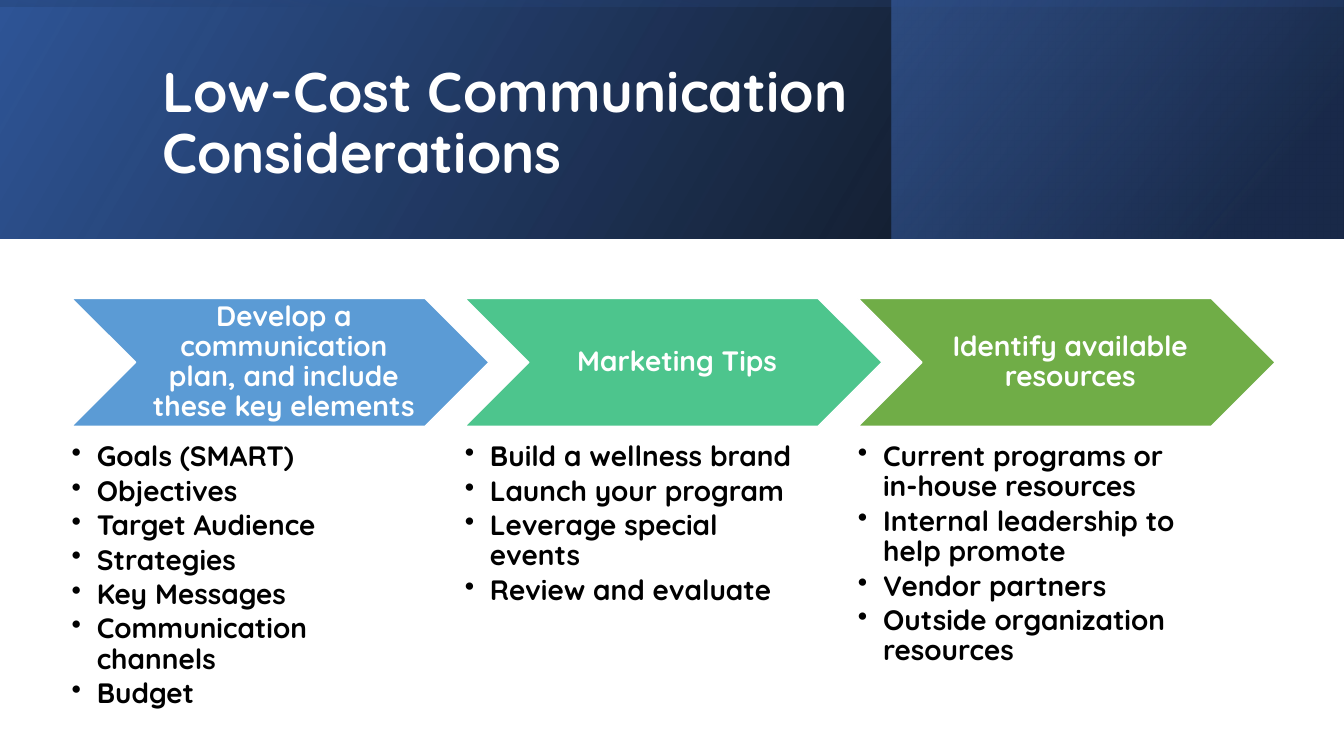
from dataclasses import dataclass

from lxml import etree
from pptx import Presentation
from pptx.dml.color import RGBColor
from pptx.enum.shapes import MSO_SHAPE as Shape
from pptx.enum.text import MSO_ANCHOR as Anchor, PP_ALIGN as Align
from pptx.oxml import parse_xml
from pptx.oxml.ns import nsdecls, qn
from pptx.util import Inches, Pt


@dataclass(frozen=True)
class Theme:
    """Colours, font and type sizes of the slide."""
    font: str = "Quicksand"
    title_size: int = 40
    body_size: int = 20
    light: str = "FFFFFF"
    dark: str = "000000"
    wash: tuple = ((0, "000000", 96), (100, "2F5597", 100))
    panel: tuple = ((19, "203864", 68), (100, "4472C4", 48))
    shade: tuple = ((23, "2F5597", 16), (99, "000000", 45))
    chevrons: tuple = ("5B9BD5", "4DC58D", "70AD47")


@dataclass(frozen=True)
class Box:
    """A rectangle in inches."""
    left: float
    top: float
    width: float
    height: float

    def inner(self, left, top, width, height):
        """Return an inner box given in percent of this one."""
        return Box(self.left + self.width * left / 100,
                   self.top + self.height * top / 100,
                   self.width * width / 100, self.height * height / 100)

    def turned(self):
        """Return the frame that covers this box after a quarter turn."""
        shift = (self.width - self.height) / 2
        return Box(self.left + shift, self.top - shift, self.height, self.width)

    def emu(self):
        """Return the four lengths in slide units."""
        return [Inches(n) for n in (self.left, self.top, self.width, self.height)]


THEME = Theme()
TITLE = "Low-Cost Communication Considerations"
COLUMNS = (
    ("Develop a communication plan, and include these key elements",
     ("Goals (SMART)", "Objectives", "Target Audience", "Strategies",
      "Key Messages", "Communication channels", "Budget")),
    ("Marketing Tips",
     ("Build a wellness brand", "Launch your program",
      "Leverage special events", "Review and evaluate")),
    ("Identify available resources",
     ("Current programs or in-house resources",
      "Internal leadership to help promote", "Vendor partners",
      "Outside organization resources")),
)


def apply(target, values):
    """Set each named attribute on the target."""
    for name, value in values.items():
        setattr(target, name, value)


def add_gradient(slide, box, stops, angle, rotation=0):
    """Add a mirrored rectangle with a translucent gradient."""
    panel = slide.shapes.add_shape(Shape.RECTANGLE, *box.emu())
    panel.shadow.inherit = False
    panel.rotation = rotation
    panel.line.fill.background()
    panel.fill.background()
    properties = panel._element.spPr
    properties.find(qn("a:xfrm")).set("flipH", "1")
    marks = "".join(
        f'<a:gs pos="{place * 1000}"><a:srgbClr val="{color}">'
        f'<a:alpha val="{alpha * 1000}"/></a:srgbClr></a:gs>'
        for place, color, alpha in stops)
    gradient = parse_xml(
        f'<a:gradFill {nsdecls("a")} rotWithShape="1"><a:gsLst>{marks}</a:gsLst>'
        f'<a:lin ang="{angle * 60000}" scaled="0"/></a:gradFill>')
    properties.replace(properties.find(qn("a:noFill")), gradient)


def add_text(slide, box, lines, size, color, margins, anchor,
             paragraph_format, bullet=False):
    """Add a text box with one paragraph for each line."""
    frame = slide.shapes.add_textbox(*box.emu()).text_frame
    sides = ("margin_left", "margin_top", "margin_right", "margin_bottom")
    apply(frame, dict(zip(sides, map(Inches, margins))))
    apply(frame, {"word_wrap": True, "vertical_anchor": anchor})
    for index, line in enumerate(lines):
        paragraph = frame.add_paragraph() if index else frame.paragraphs[0]
        paragraph.text = line
        apply(paragraph, {"line_spacing": 0.9, **paragraph_format})
        if bullet:
            layout = paragraph._p.get_or_add_pPr()
            for name, inches in {"marL": 0.25, "indent": -0.25}.items():
                layout.set(name, str(int(Inches(inches))))
            etree.SubElement(layout, qn("a:buChar")).set("char", "•")
        apply(paragraph.font, {"name": THEME.font, "size": Pt(size), "bold": True})
        paragraph.font.color.rgb = RGBColor.from_string(color)


def add_banner(slide, box):
    """Add the gradient banner with the slide title."""
    add_gradient(slide, box, THEME.wash, 330)
    add_gradient(slide, box.inner(66.32, 0, 33.61, 100), THEME.panel, 320)
    add_gradient(slide, box.turned(), THEME.shade, 350, 270)
    add_text(slide, box.inner(11.33, 16.03, 79.74, 72.57), [TITLE],
             THEME.title_size, THEME.light, (0.1, 0.05, 0.1, 0.05),
             Anchor.MIDDLE, {"alignment": Align.LEFT})


def add_column(slide, box, heading, items, color):
    """Add a chevron with its heading and the list below it."""
    chevron = slide.shapes.add_shape(Shape.CHEVRON, *box.inner(0, 0, 100, 33.07).emu())
    chevron.shadow.inherit = False
    chevron.fill.solid()
    chevron.fill.fore_color.rgb = RGBColor.from_string(color)
    chevron.line.color.rgb = RGBColor.from_string(THEME.light)
    chevron.line.width = Pt(1)
    add_text(slide, box.inner(15.46, 0, 69.32, 33.07), [heading],
             THEME.body_size, THEME.light, (0.09, 0.03, 0.03, 0.03),
             Anchor.MIDDLE, {"alignment": Align.CENTER})
    add_text(slide, box.inner(0, 37.24, 79.95, 62.76), items,
             THEME.body_size, THEME.dark, (0, 0, 0, 0), Anchor.TOP,
             {"alignment": Align.LEFT, "space_after": Pt(3)}, bullet=True)


def add_columns(slide, box):
    """Add the overlapping columns at an equal pitch."""
    for index, ((heading, items), color) in enumerate(zip(COLUMNS, THEME.chevrons)):
        add_column(slide, box.inner(32.66 * index, 0, 34.67, 100),
                   heading, items, color)


def main():
    """Build and save the slide."""
    page = Box(0, 0, 13.33, 7.5)
    deck = Presentation()
    apply(deck, {"slide_width": Inches(page.width), "slide_height": Inches(page.height)})
    slide = deck.slides.add_slide(deck.slide_layouts[6])
    add_banner(slide, page.inner(0, 0, 100, 31.6))
    add_columns(slide, page.inner(5.33, 39.47, 89.57, 51.2))
    deck.save("out.pptx")


if __name__ == "__main__":
    main()
